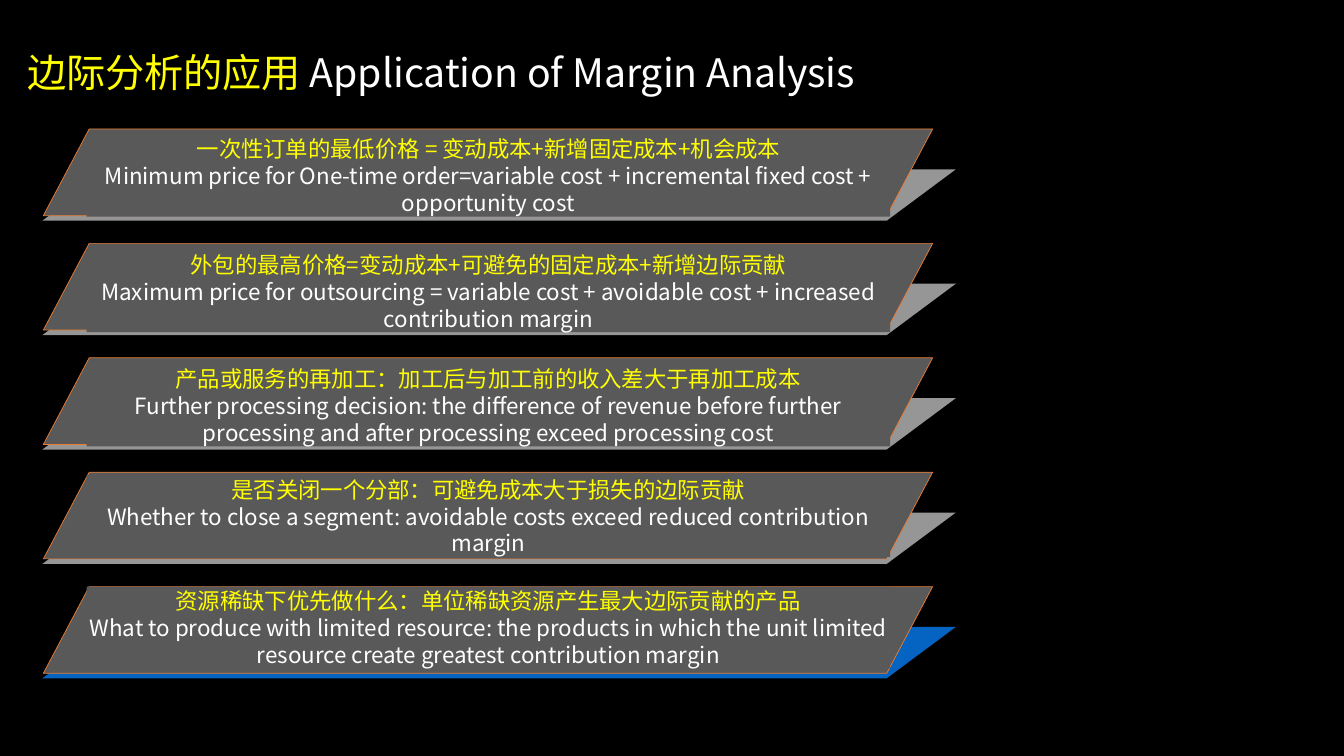
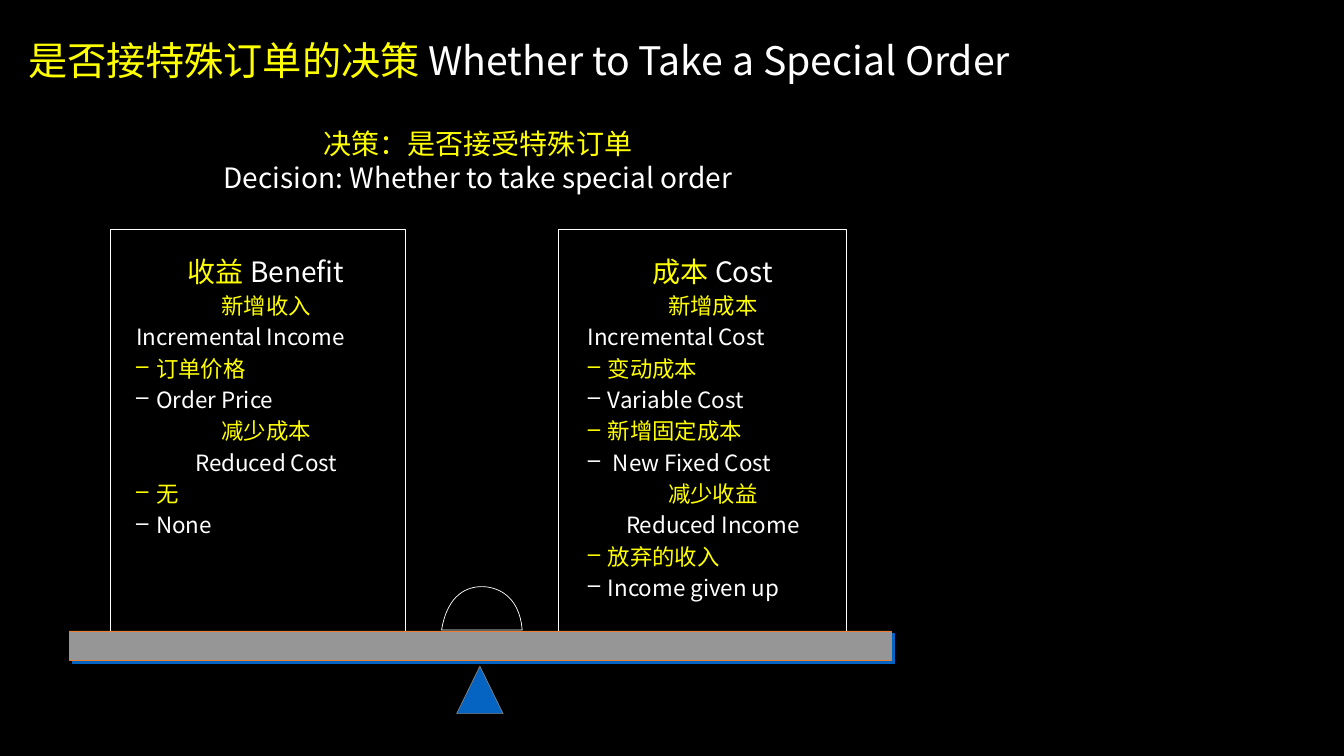
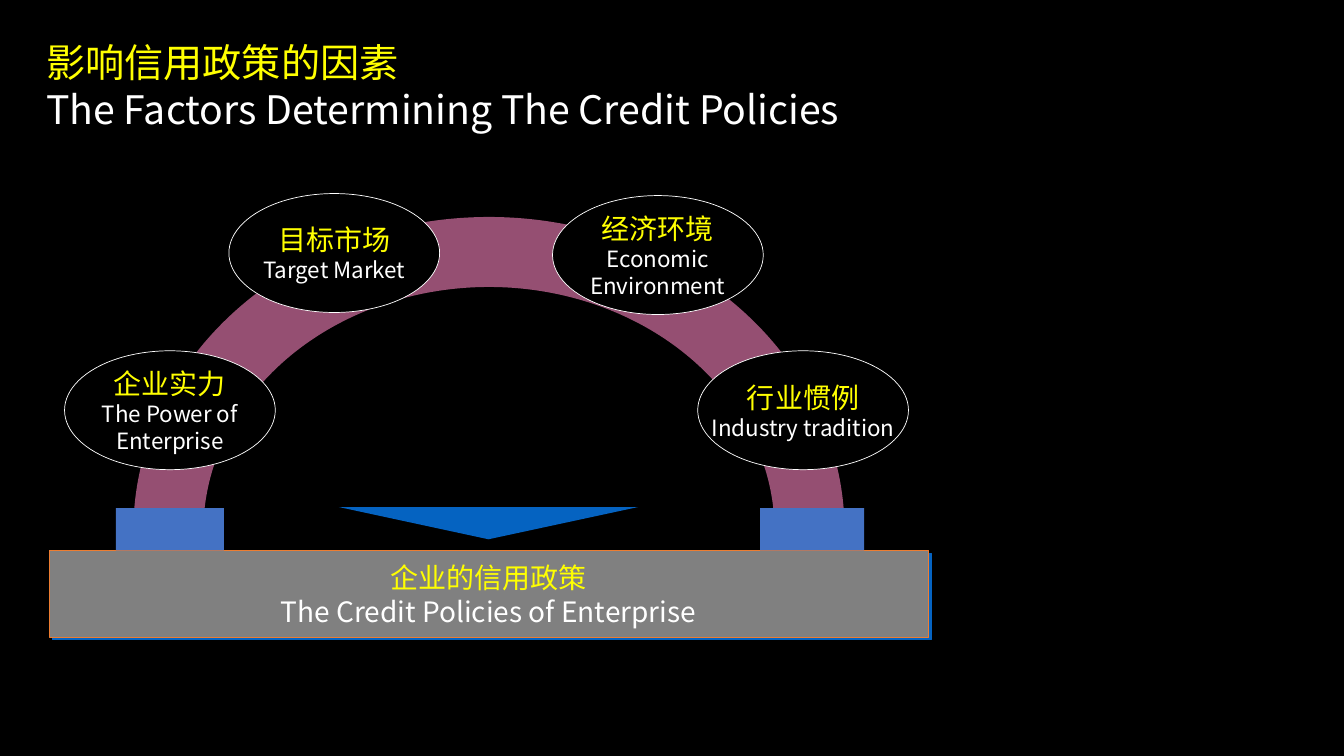
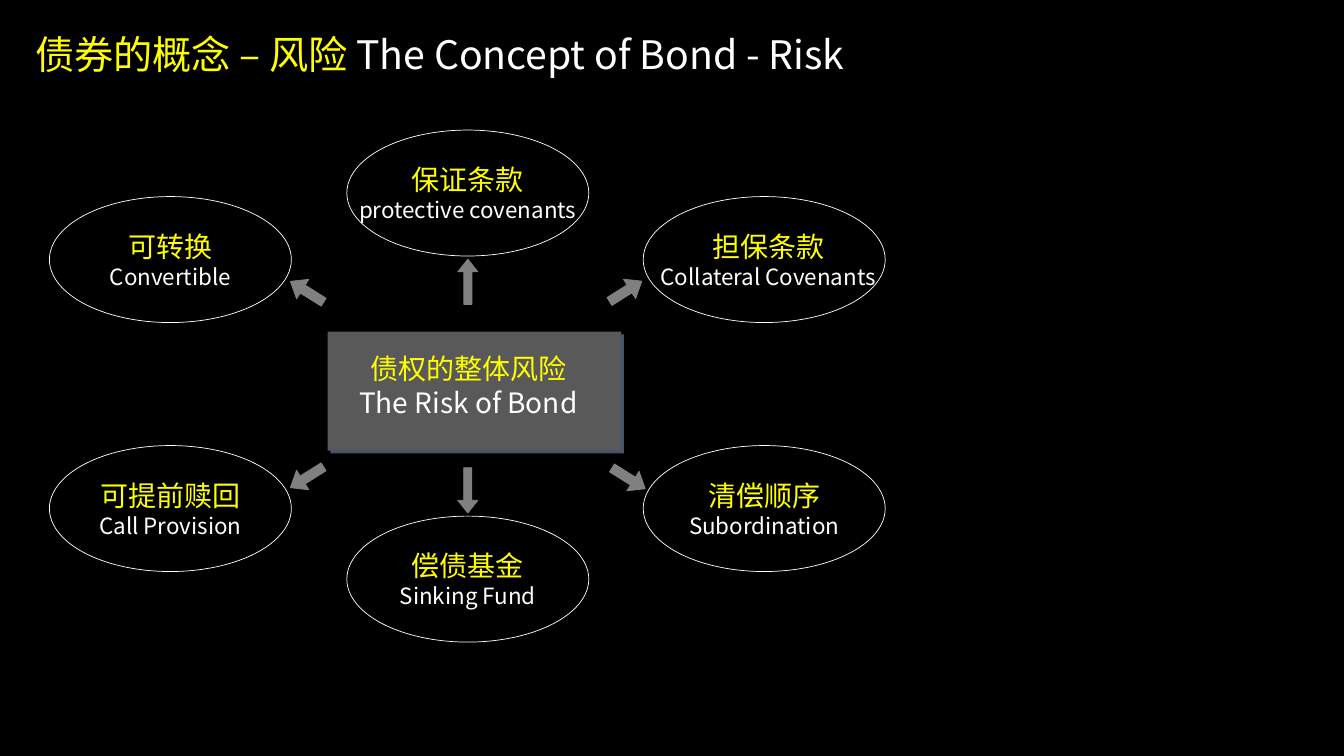
from lxml import etree
from pptx import Presentation
from pptx.dml.color import RGBColor
from pptx.enum.shapes import MSO_SHAPE
from pptx.enum.text import MSO_ANCHOR, PP_ALIGN
from pptx.oxml.ns import qn
from pptx.util import Inches, Pt

RECTANGLE = MSO_SHAPE.RECTANGLE
ELLIPSE = MSO_SHAPE.OVAL
PARALLELOGRAM = MSO_SHAPE.PARALLELOGRAM
TRIANGLE = MSO_SHAPE.ISOSCELES_TRIANGLE
DOWN_ARROW = MSO_SHAPE.DOWN_ARROW
ARC = MSO_SHAPE.ARC
LEFT, CENTER = PP_ALIGN.LEFT, PP_ALIGN.CENTER
TOP, MIDDLE = MSO_ANCHOR.TOP, MSO_ANCHOR.MIDDLE

FONT = "Noto Sans CJK SC"
BLACK, WHITE, YELLOW = "000000", "FFFFFF", "FFFF00"
DARK_GRAY, GRAY, LIGHT_GRAY = "595959", "808080", "969696"
ORANGE, BLUE, SLATE = "ED7D31", "0563C1", "44546A"
PIER_BLUE, PLUM = "4472C4", "954F72"
TITLE_SIZE, HEAD_SIZE, BODY_SIZE = 28, 20, 16
LINE_FACTOR = 1.2

APPLICATIONS = [
    ("一次性订单的最低价格 = 变动成本+新增固定成本+机会成本",
     "Minimum price for One-time order=variable cost + incremental fixed cost + opportunity cost",
     LIGHT_GRAY, 0.06),
    ("外包的最高价格=变动成本+可避免的固定成本+新增边际贡献",
     "Maximum price for outsourcing = variable cost + avoidable cost + increased contribution margin",
     LIGHT_GRAY, 0.07),
    ("产品或服务的再加工：加工后与加工前的收入差大于再加工成本",
     "Further processing decision: the difference of revenue before further processing "
     "and after processing exceed processing cost",
     LIGHT_GRAY, 0.07),
    ("是否关闭一个分部：可避免成本大于损失的边际贡献",
     "Whether to close a segment: avoidable costs exceed reduced contribution margin",
     LIGHT_GRAY, 0.03),
    ("资源稀缺下优先做什么：单位稀缺资源产生最大边际贡献的产品",
     "What to produce with limited resource: the products in which the unit limited "
     "resource create greatest contribution margin",
     BLUE, 0),
]

DECISION = ("决策：是否接受特殊订单", "Decision: Whether to take special order")
BENEFIT = [
    ("center", "新增收入"), ("plain", "Incremental Income"),
    ("dash", "订单价格"), ("dash", "Order Price"),
    ("center", "减少成本"), ("center", "Reduced Cost"),
    ("dash", "无"), ("dash", "None"),
]
COST = [
    ("center", "新增成本"), ("plain", "Incremental Cost"),
    ("dash", "变动成本"), ("dash", "Variable Cost"),
    ("dash", "新增固定成本"), ("dash", " New Fixed Cost"),
    ("center", "减少收益"), ("center", "Reduced Income"),
    ("dash", "放弃的收入"), ("dash", "Income given up"),
]
PANS = [
    (1.09, 2.93, 1.16, 2.77, ("收益 ", "Benefit"), BENEFIT),
    (5.54, 2.86, 5.64, 2.67, ("成本 ", "Cost"), COST),
]
DOME = [
    [(4.38, 6.25), (4.44, 5.89), (4.64, 5.82), (4.78, 5.82)],
    [(4.78, 5.82), (4.91, 5.82), (5.15, 5.89), (5.18, 6.25)],
]

POLICY = ("企业的信用政策", "The Credit Policies of Enterprise")
FACTORS = [
    (0.64, 3.48, ("企业实力", "The Power of Enterprise")),
    (6.92, 3.48, ("行业惯例", "Industry tradition")),
    (2.27, 1.92, ("目标市场", "Target Market")),
    (5.48, 1.94, ("经济环境", "Economic", "Environment")),
]

BOND_RISK = ("债权的整体风险", "The Risk of Bond")
PROVISIONS = [
    (3.44, 1.29, 0, ("保证条款", "protective covenants")),
    (6.38, 1.95, 0.04, ("担保条款", "Collateral Covenants")),
    (6.38, 4.42, 0, ("清偿顺序", "Subordination")),
    (3.44, 5.12, 0, ("偿债基金", "Sinking Fund")),
    (0.49, 4.42, 0, ("可提前赎回", "Call Provision")),
    (0.49, 1.95, 0, ("可转换", "Convertible")),
]
ARROWS = [
    (4.54, 2.57, 0.2, 0.45, 180),
    (4.54, 4.64, 0.2, 0.45, 0),
    (6.09, 2.7, 0.23, 0.38, 237.9),
    (2.93, 4.54, 0.23, 0.39, 57.9),
    (2.93, 2.7, 0.23, 0.39, 122.1),
    (6.12, 4.55, 0.23, 0.39, 302.1),
]


def rgb(value):
    return RGBColor.from_string(value)


def script_color(text):
    return YELLOW if any("一" <= letter <= "龥" for letter in text) else WHITE


def paint(shape, fill=None, line=None, width=0.5, shadow=None):
    if fill:
        shape.fill.solid()
        shape.fill.fore_color.rgb = rgb(fill)
    else:
        shape.fill.background()
    if line:
        shape.line.color.rgb = rgb(line)
        shape.line.width = Pt(width)
    else:
        shape.line.fill.background()
    shape.shadow.inherit = False
    if shadow:
        effects = shape._element.spPr.find(qn("a:effectLst"))
        outer = etree.SubElement(effects, qn("a:outerShdw"), dist=str(Pt(2.8)),
                                 dir="2700000", algn="ctr", rotWithShape="0")
        etree.SubElement(outer, qn("a:srgbClr"), val=shadow)


def draw(slide, preset, x, y, w, h, adjustments=(), rotation=0, **look):
    shape = slide.shapes.add_shape(preset, Inches(x), Inches(y), Inches(w), Inches(h))
    for index, value in enumerate(adjustments):
        shape.adjustments[index] = value
    shape.rotation = rotation
    paint(shape, **look)


def write(paragraph, size, *texts, align=LEFT):
    paragraph.alignment = align
    paragraph.line_spacing = Pt(size * LINE_FACTOR)
    paragraph.font.name = FONT
    paragraph.font.size = Pt(size)
    defaults = paragraph._p.pPr.find(qn("a:defRPr"))
    etree.SubElement(defaults, qn("a:ea"), typeface=FONT)
    for text in texts:
        run = paragraph.add_run()
        run.text = text
        font = paragraph.font if len(texts) == 1 else run.font
        font.color.rgb = rgb(script_color(text))


def add_box(slide, x, y, w, h, anchor=MIDDLE, inset=True):
    box = slide.shapes.add_textbox(Inches(x), Inches(y), Inches(w), Inches(h))
    frame = box.text_frame
    frame.word_wrap = True
    frame.vertical_anchor = anchor
    if not inset:
        frame.margin_left = frame.margin_right = 0
        frame.margin_top = frame.margin_bottom = 0
    return box


def add_paragraph(frame, index):
    return frame.add_paragraph() if index else frame.paragraphs[0]


def add_label(slide, x, y, w, h, lines, head=HEAD_SIZE, body=BODY_SIZE, fill=None):
    box = add_box(slide, x, y, w, h, inset=False)
    if fill:
        paint(box, fill)
    for index, text in enumerate(lines):
        write(add_paragraph(box.text_frame, index), body if index else head, text, align=CENTER)


def add_slide(prs, x, middle, *title_lines):
    slide = prs.slides.add_slide(prs.slide_layouts[6])
    height = 0.2 + 0.45 * len(title_lines)
    frame = add_box(slide, x, middle - height / 2, 12, height).text_frame
    for index, texts in enumerate(title_lines):
        write(add_paragraph(frame, index), TITLE_SIZE, *texts)
    return slide


def add_ledger(slide, x, y, w, h, heading, entries):
    frame = add_box(slide, x, y, w, h, anchor=TOP, inset=False).text_frame
    rows = [("center", HEAD_SIZE, heading)]
    rows += [(kind, BODY_SIZE, (text,)) for kind, text in entries]
    for index, (kind, size, texts) in enumerate(rows):
        paragraph = add_paragraph(frame, index)
        properties = paragraph._p.get_or_add_pPr()
        properties.set("marL", str(Inches(0.39)))
        properties.set("indent", str(Inches(-0.2)))
        if kind == "dash":
            bullet_color = etree.SubElement(properties, qn("a:buClr"))
            etree.SubElement(bullet_color, qn("a:srgbClr"), val=script_color(texts[0]))
            etree.SubElement(properties, qn("a:buChar"), char="–")
        if index:
            paragraph.space_before = Pt(size * 0.2)
        write(paragraph, size, *texts, align=CENTER if kind == "center" else LEFT)


def bezier(points, steps=16):
    for step in range(steps + 1):
        t = step / steps
        weights = ((1 - t) ** 3, 3 * t * (1 - t) ** 2, 3 * t * t * (1 - t), t ** 3)
        yield tuple(Inches(sum(k * point[axis] for k, point in zip(weights, points)))
                    for axis in (0, 1))


def build_applications(prs):
    slide = add_slide(prs, 0.17, 0.71, ("边际分析的应用 ", "Application of Margin Analysis"))
    for row, (chinese, english, base, drop) in enumerate(APPLICATIONS):
        top = 1.28 + 1.135 * row
        draw(slide, PARALLELOGRAM, 0.42, top + 0.4, 9.06, 0.51, [1.345], fill=base)
        draw(slide, PARALLELOGRAM, 0.43, top, 8.82, 0.86, [0.529], fill=DARK_GRAY, line=ORANGE)
        add_label(slide, 0.86, top + drop, 7.97, 0.81, (chinese, english),
                  head=BODY_SIZE, fill=DARK_GRAY)


def build_special_order(prs):
    slide = add_slide(prs, 0.18, 0.59, ("是否接特殊订单的决策 ", "Whether to Take a Special Order"))
    outline = [point for curve in DOME for point in bezier(curve)]
    builder = slide.shapes.build_freeform(*outline[0], scale=1.0)
    builder.add_line_segments(outline[1:], close=True)
    paint(builder.convert_to_shape(), BLACK, WHITE)
    for x, w, text_x, text_w, heading, entries in PANS:
        draw(slide, RECTANGLE, x, 2.28, w, 3.98, fill=BLACK, line=WHITE)
        add_ledger(slide, text_x, 2.52, text_w, 3.57, heading, entries)
    draw(slide, RECTANGLE, 0.69, 6.26, 8.15, 0.29, fill=LIGHT_GRAY, line=ORANGE, shadow=BLUE)
    draw(slide, TRIANGLE, 4.53, 6.61, 0.46, 0.47, fill=BLUE, line=GRAY)
    add_label(slide, 0.27, 1.18, 8.94, 0.82, DECISION, body=HEAD_SIZE)


def build_credit_policies(prs):
    slide = add_slide(prs, 0.36, 0.85, ("影响信用政策的因素",),
                      ("The Factors Determining The Credit Policies",))
    draw(slide, ARC, 1.67, 2.5, 6.36, 5.54, [108, 0], line=PLUM, width=50)
    draw(slide, RECTANGLE, 0.49, 5.46, 8.72, 0.86, fill=GRAY, line=ORANGE, shadow=BLUE)
    for x, w in ((1.15, 1.07), (7.54, 1.03)):
        draw(slide, RECTANGLE, x, 5.04, w, 0.42, fill=PIER_BLUE)
    add_label(slide, 0.66, 5.56, 8.37, 0.67, POLICY, body=HEAD_SIZE)
    draw(slide, TRIANGLE, 3.36, 5.03, 2.97, 0.32, rotation=180, fill=BLUE)
    for x, y, lines in FACTORS:
        draw(slide, ELLIPSE, x, y, 2.09, 1.18, fill=BLACK, line=WHITE)
        add_label(slide, x + 0.1, y, 1.89, 1.18, lines)


def build_bond_risk(prs):
    slide = add_slide(prs, 0.25, 0.53, ("债券的概念 – 风险 ", "The Concept of Bond - Risk"))
    for x, y, w, h, rotation in ARROWS:
        draw(slide, DOWN_ARROW, x, y, w, h, [0.405, 0.63], rotation, fill=GRAY, line=GRAY)
    draw(slide, RECTANGLE, 3.25, 3.29, 2.91, 1.18, fill=DARK_GRAY, shadow=SLATE)
    add_label(slide, 3.45, 3.49, 2.39, 0.67, BOND_RISK, body=HEAD_SIZE)
    for x, y, shift, lines in PROVISIONS:
        draw(slide, ELLIPSE, x, y, 2.4, 1.25, line=WHITE)
        add_label(slide, x + shift, y, 2.4, 1.25, lines)


def main():
    prs = Presentation()
    prs.slide_width, prs.slide_height = Inches(13.33), Inches(7.5)
    backdrop = prs.slide_master.background.fill
    backdrop.solid()
    backdrop.fore_color.rgb = rgb(BLACK)
    for build in (build_applications, build_special_order, build_credit_policies, build_bond_risk):
        build(prs)
    prs.save("out.pptx")


if __name__ == "__main__":
    main()
